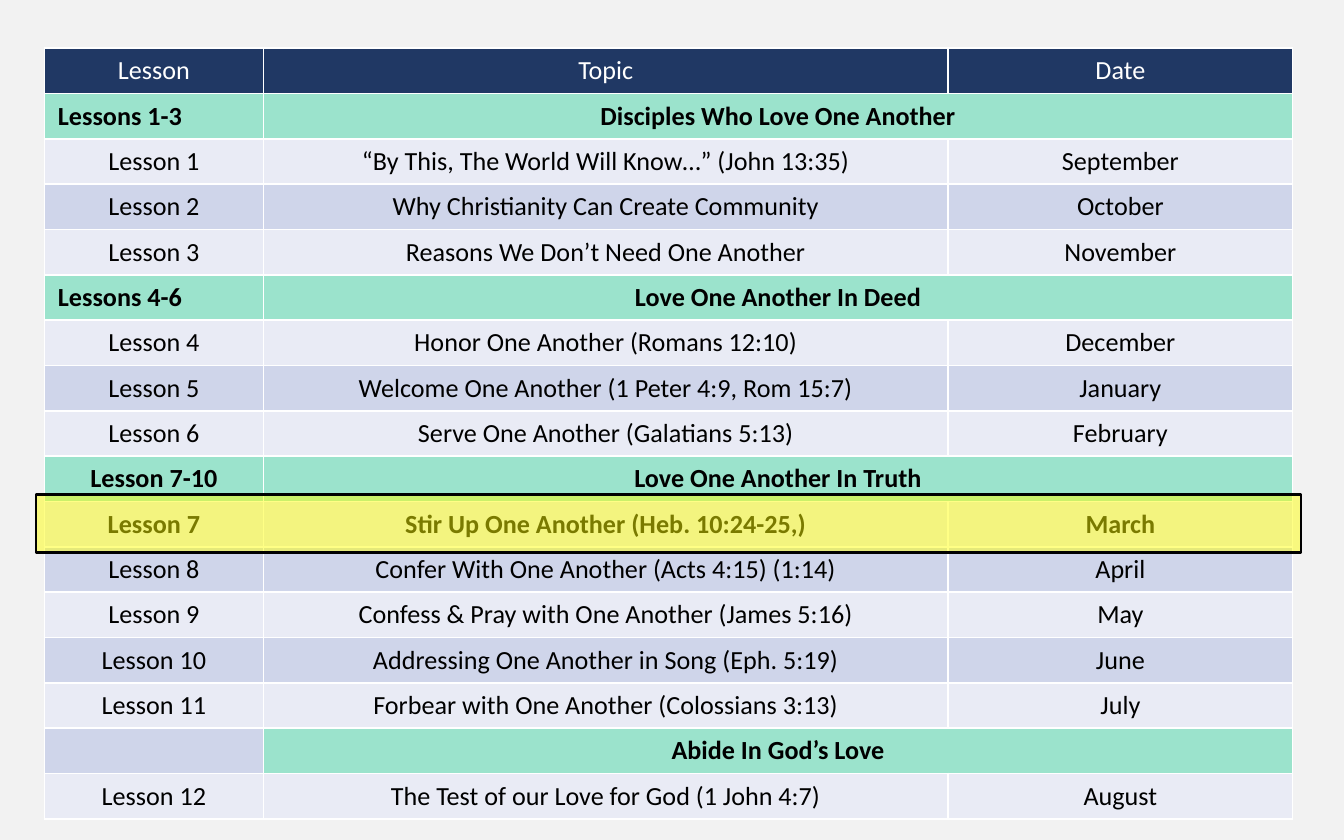
from lxml import etree
from pptx import Presentation
from pptx import util as u
from pptx.dml.color import RGBColor
from pptx.enum import shapes, text
from pptx.oxml.ns import qn

COLORS = {
    "background": "F2F2F2",
    "header": "203864",
    "section": "9BE3CC",
    "light": "E9EBF5",
    "dark": "CFD5EA",
    "white": "FFFFFF",
    "black": "000000",
    "highlight": "FFFF00",
}
FONT, SIZE = "Calibri", u.Pt(14)
CURRENT = "Lesson 7"
COLUMNS = (4.14, 12.94, 6.51)
TABLE_HEIGHT = 14.58

# Two entries make a section row, three a lesson row
ROWS = [
    ("Lesson", "Topic", "Date"),
    ("Lessons 1-3", "Disciples Who Love One Another"),
    ("Lesson 1", "“By This, The World Will Know…” (John 13:35)", "September"),
    ("Lesson 2", "Why Christianity Can Create Community", "October"),
    ("Lesson 3", "Reasons We Don’t Need One Another", "November"),
    ("Lessons 4-6", "Love One Another In Deed"),
    ("Lesson 4", "Honor One Another (Romans 12:10)", "December"),
    ("Lesson 5", "Welcome One Another (1 Peter 4:9, Rom 15:7)", "January"),
    ("Lesson 6", "Serve One Another (Galatians 5:13)", "February"),
    ("Lesson 7-10", "Love One Another In Truth"),
    (CURRENT, "Stir Up One Another (Heb. 10:24-25,)", "March"),
    ("Lesson 8", "Confer With One Another (Acts 4:15) (1:14)", "April"),
    ("Lesson 9", "Confess & Pray with One Another (James 5:16)", "May"),
    ("Lesson 10", "Addressing One Another in Song (Eph. 5:19)", "June"),
    ("Lesson 11", "Forbear with One Another (Colossians 3:13)", "July"),
    ("", "Abide In God’s Love"),
    ("Lesson 12", "The Test of our Love for God (1 John 4:7)", "August"),
]


def rgb(name):
    return RGBColor.from_string(COLORS[name])


def paint(fill, name):
    fill.solid()
    fill.fore_color.rgb = rgb(name)


def write_cell(cell, words, fill, color, bold, align):
    paint(cell.fill, fill)
    p = cell.text_frame.paragraphs[0]
    p.text = words
    p.alignment = align
    for r in p.runs:
        r.font.name, r.font.size, r.font.bold = FONT, SIZE, bold
        r.font.color.rgb = rgb(color)
    if not words:  # keeps the row from growing around an empty cell
        etree.SubElement(p._p, qn("a:endParaRPr"), sz=str(int(SIZE.pt * 100)))


def add_schedule(slide):
    frame = slide.shapes.add_table(
        len(ROWS), len(COLUMNS), u.Cm(0.84), u.Cm(0.91),
        u.Cm(sum(COLUMNS)), u.Cm(TABLE_HEIGHT))
    table = frame.table
    for column, width in zip(table.columns, COLUMNS):
        column.width = u.Cm(width)

    for i, row in enumerate(ROWS):
        section = len(row) == 2
        if section:
            table.cell(i, 1).merge(table.cell(i, 2))
        band = "dark" if i % 2 else "light"
        for j, words in enumerate(row):
            fill = "header" if i == 0 else "section" if section and words else band
            left = j == 0 and words.startswith("Lessons")
            write_cell(
                table.cell(i, j), words, fill,
                color="white" if i == 0 else "black",
                bold=section or row[0] == CURRENT,
                align=text.PP_ALIGN.LEFT if left else text.PP_ALIGN.CENTER)


def add_highlight(slide):
    sp = slide.shapes.add_shape(
        shapes.MSO_SHAPE.RECTANGLE, u.Cm(0.68), u.Cm(9.35), u.Cm(23.91), u.Cm(1.1))
    sp.shadow.inherit = False
    paint(sp.fill, "highlight")
    color = sp.fill._xPr.find(qn("a:solidFill"))[0]
    etree.SubElement(color, qn("a:alpha"), val="48000")
    sp.line.color.rgb = rgb("black")
    sp.line.width = u.Pt(1.5)


def main():
    prs = Presentation()
    prs.slide_width, prs.slide_height = u.Cm(25.4), u.Cm(15.88)
    slide = prs.slides.add_slide(prs.slide_layouts[6])
    paint(slide.background.fill, "background")

    # Lesson schedule, with the current lesson marked on top
    add_schedule(slide)
    add_highlight(slide)
    prs.save("out.pptx")


if __name__ == "__main__":
    main()
